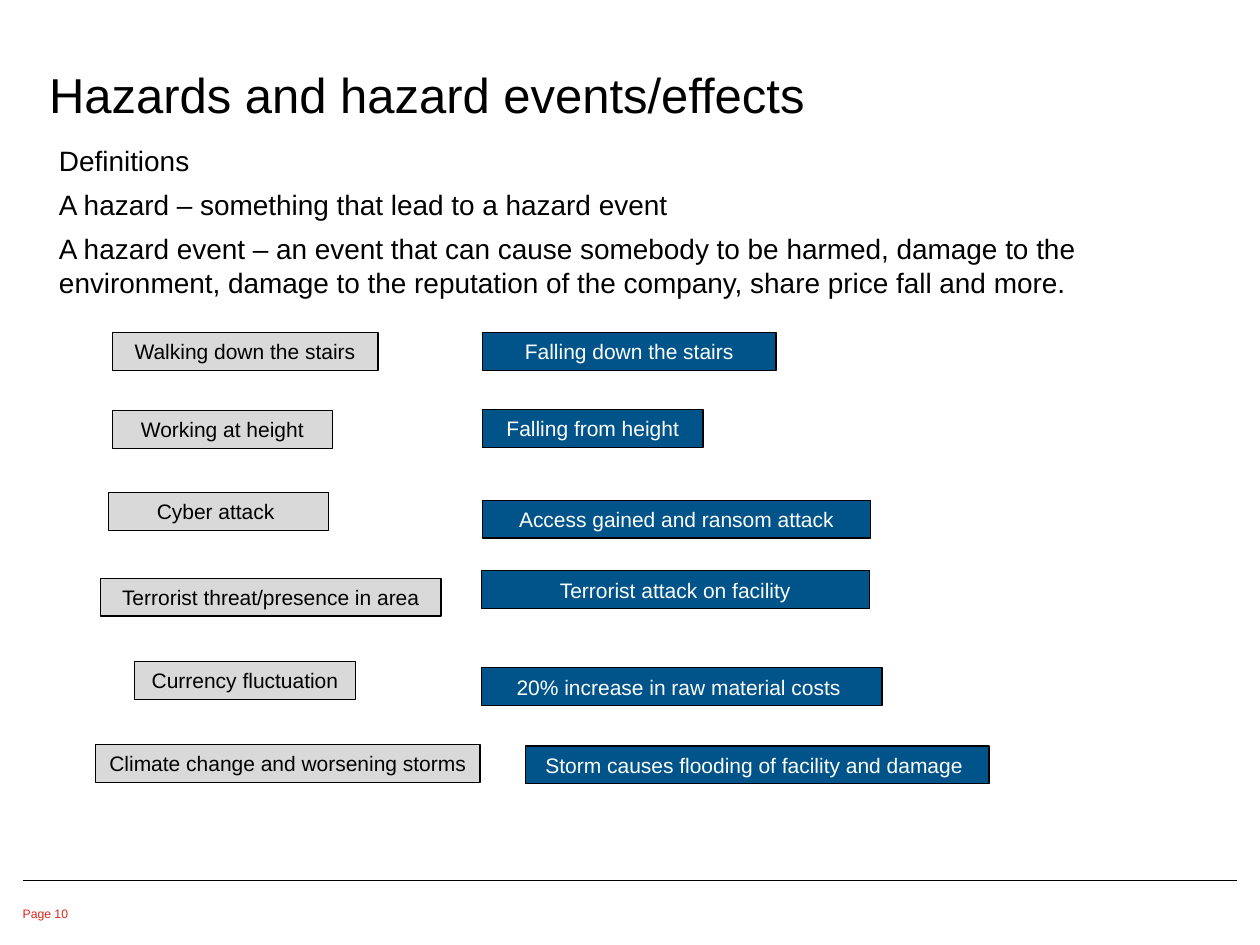
from pptx import Presentation
from pptx.dml.color import RGBColor
from pptx.enum.shapes import MSO_CONNECTOR, MSO_SHAPE
from pptx.enum.text import MSO_ANCHOR, PP_ALIGN
from pptx.oxml.ns import qn
from pptx.util import Inches, Pt
from lxml.etree import SubElement

COLORS = {"black": "000000", "white": "FFFFFF", "red": "DC271E",
          "hazard": "D9D9D9", "event": "01548A"}
FONT = "Arial"
WIDTH, HEIGHT = 10, 7.5
MARGIN = 0.18
RULE_Y = 6.99
BOX_HEIGHT = 0.3

TITLE = "Hazards and hazard events/effects"
PAGE = "Page 10"
DEFINITIONS = [
    "Definitions",
    "A hazard – something that lead to a hazard event",
    "A hazard event – an event that can cause somebody to be harmed, damage to the "
    "environment, damage to the reputation of the company, share price fall and more.",
]
HAZARDS = [
    ("Walking down the stairs", 0.89, 2.64, 2.11),
    ("Working at height", 0.89, 3.26, 1.75),
    ("Cyber attack ", 0.86, 3.91, 1.75),
    ("Terrorist threat/presence in area", 0.8, 4.59, 2.7),
    ("Currency fluctuation", 1.07, 5.25, 1.75),
    ("Climate change and worsening storms", 0.76, 5.91, 3.05),
]
EVENTS = [
    ("Falling down the stairs", 3.83, 2.64, 2.33),
    ("Falling from height", 3.83, 3.25, 1.75),
    ("Access gained and ransom attack", 3.83, 3.97, 3.08),
    ("Terrorist attack on facility", 3.82, 4.53, 3.08),
    ("20% increase in raw material costs ", 3.82, 5.3, 3.18),
    ("Storm causes flooding of facility and damage ", 4.17, 5.92, 3.68),
]


def rgb(name):
    return RGBColor.from_string(COLORS[name])


def write(tf, lines, size, color, align=PP_ALIGN.LEFT, before=0):
    tf.text = "\n".join(lines)
    for p in tf.paragraphs:
        p.alignment = align
        p.space_before = Pt(before)
        for r in p.runs:
            r.font.name = FONT
            r.font.size = Pt(size)
            r.font.color.rgb = rgb(color)


def add_text(s, box, lines, size, color="black", before=0, inset=True,
             anchor=MSO_ANCHOR.TOP, wrap=True):
    tf = s.shapes.add_textbox(*map(Inches, box)).text_frame
    tf.word_wrap = wrap
    tf.vertical_anchor = anchor
    if not inset:
        tf.margin_left = tf.margin_right = tf.margin_top = tf.margin_bottom = 0
    write(tf, lines, size, color, before=before)


def add_box(s, text, left, top, width, fill, color):
    sp = s.shapes.add_shape(MSO_SHAPE.RECTANGLE,
                            *map(Inches, (left, top, width, BOX_HEIGHT)))
    sp.shadow.inherit = False
    sp.fill.solid()
    sp.fill.fore_color.rgb = rgb(fill)
    sp.line.color.rgb = rgb("black")
    sp.line.width = Pt(0.75)
    sp.text_frame.word_wrap = True
    write(sp.text_frame, [text], 12, color, PP_ALIGN.CENTER)


def add_rule(s):
    ln = s.shapes.add_connector(MSO_CONNECTOR.STRAIGHT, *map(
        Inches, (MARGIN, RULE_Y, WIDTH - MARGIN, RULE_Y)))
    ln.line.color.rgb = rgb("black")
    ln.line.width = Pt(0.75)
    SubElement(ln._element.spPr, qn("a:effectLst"))


def main():
    prs = Presentation()
    prs.slide_width, prs.slide_height = Inches(WIDTH), Inches(HEIGHT)
    s = prs.slides.add_slide(prs.slide_layouts[6])
    add_rule(s)
    add_text(s, (0.39, -0.08, 9.36, 1.06), [TITLE], 28,
             inset=False, anchor=MSO_ANCHOR.BOTTOM)
    add_text(s, (MARGIN, 7.19, 0.41, 0.15), [PAGE], 7, "red",
             inset=False, wrap=False)
    add_text(s, (0.37, 1.09, 9.1, 1.35), DEFINITIONS, 16, before=6)
    for boxes, fill, color in ((HAZARDS, "hazard", "black"),
                               (EVENTS, "event", "white")):
        for text, left, top, width in boxes:
            add_box(s, text, left, top, width, fill, color)
    prs.save("out.pptx")


if __name__ == "__main__":
    main()
